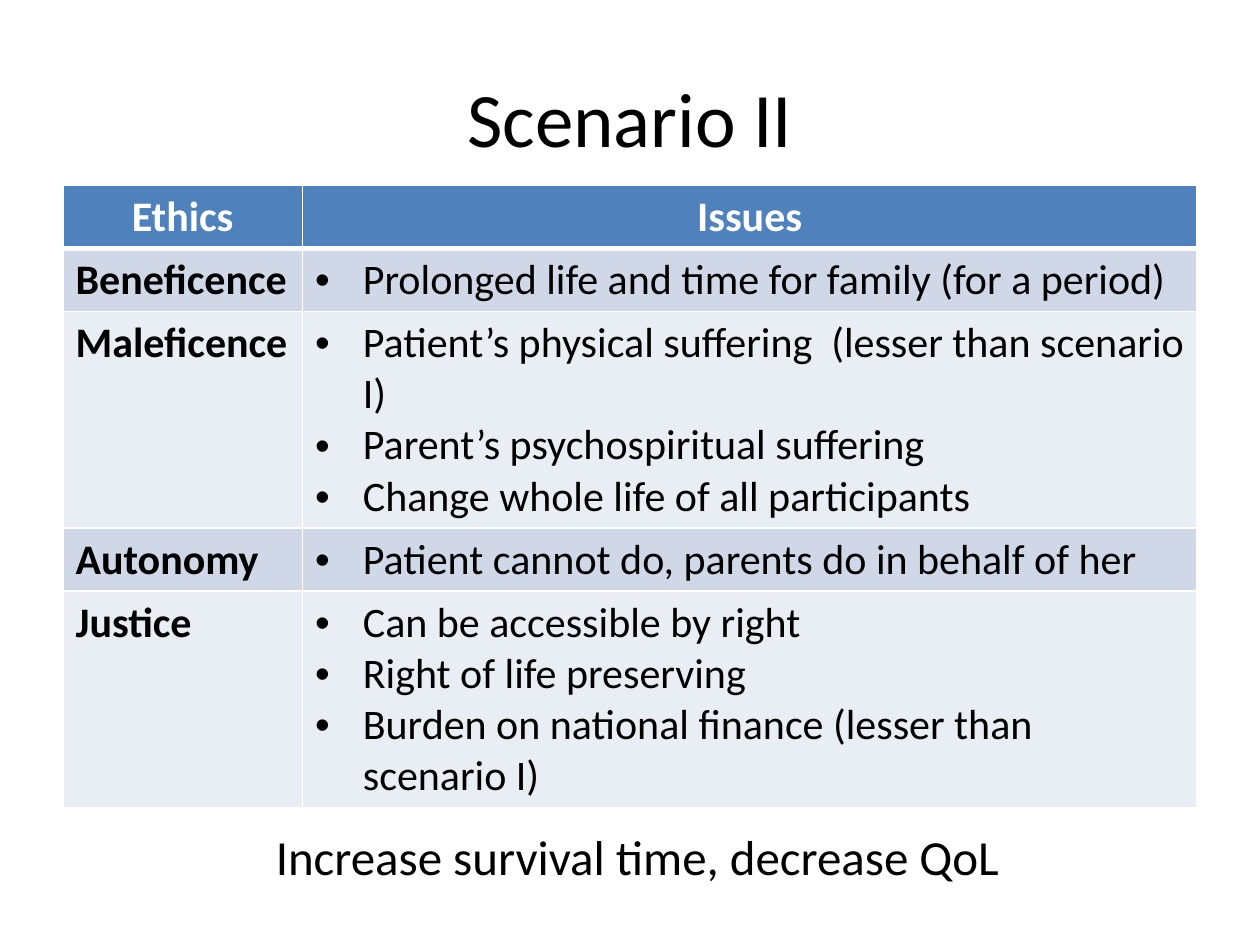
from lxml import etree
from pptx import Presentation
from pptx.dml.color import RGBColor
from pptx.enum import text as t
from pptx.oxml.ns import qn
from pptx.util import Inches, Pt

BLACK = RGBColor(0x00, 0x00, 0x00)
WHITE = RGBColor(0xFF, 0xFF, 0xFF)
HEADER_BLUE = RGBColor(0x4F, 0x81, 0xBD)
BANDS = (RGBColor(0xD0, 0xD8, 0xE8), RGBColor(0xE9, 0xED, 0xF4))

TITLE = "Scenario II"
HEADINGS = ("Ethics", "Issues")
ETHICS = [
    ("Beneficence", ["Prolonged life and time for family (for a period)"], 0.5),
    ("Maleficence", ["Patient’s physical suffering  (lesser than scenario I)",
                     "Parent’s psychospiritual suffering",
                     "Change whole life of all participants"], 1.72),
    ("Autonomy", ["Patient cannot do, parents do in behalf of her"], 0.5),
    ("Justice", ["Can be accessible by right",
                 "Right of life preserving",
                 "Burden on national finance (lesser than scenario I)"], 1.72),
]
CONCLUSION = "Increase survival time, decrease QoL"
COLUMN_WIDTHS = (1.9, 7.1)
HEADER_HEIGHT = 0.5
INDENT = Inches(0.38)


def write(frame, lines, size=24, color=BLACK, bold=False, align=t.PP_ALIGN.LEFT, bullet=False):
    for index, line in enumerate(lines):
        paragraph = frame.paragraphs[0] if index == 0 else frame.add_paragraph()
        paragraph.alignment = align
        run = paragraph.add_run()
        run.text = line
        run.font.name = "Calibri"
        run.font.size = Pt(size)
        run.font.bold = bold
        run.font.color.rgb = color
        if bullet:
            properties = paragraph._p.get_or_add_pPr()
            properties.set("marL", str(INDENT))
            properties.set("indent", str(-INDENT))
            etree.SubElement(properties, qn("a:buFont"), typeface="Arial")
            etree.SubElement(properties, qn("a:buChar"), char="•")


def add_text(slide, box, line, anchor=t.MSO_ANCHOR.TOP, **style):
    frame = slide.shapes.add_textbox(*map(Inches, box)).text_frame
    frame.word_wrap = True
    frame.vertical_anchor = anchor
    write(frame, [line], **style)
    return frame


def style_cell(cell, fill, top=1, bottom=1):
    properties = cell._tc.get_or_add_tcPr()
    for side, width in (("L", 1), ("R", 1), ("T", top), ("B", bottom)):
        border = etree.SubElement(properties, qn(f"a:ln{side}"), w=str(Pt(width)))
        solid = etree.SubElement(border, qn("a:solidFill"))
        etree.SubElement(solid, qn("a:srgbClr"), val=str(WHITE))
    cell.fill.solid()
    cell.fill.fore_color.rgb = fill


def add_ethics_table(slide):
    heights = [HEADER_HEIGHT] + [height for _, _, height in ETHICS]
    box = (0.5, 1.47, sum(COLUMN_WIDTHS), sum(heights))
    table = slide.shapes.add_table(len(heights), len(COLUMN_WIDTHS), *map(Inches, box)).table
    for column, width in zip(table.columns, COLUMN_WIDTHS):
        column.width = Inches(width)
    for row, height in zip(table.rows, heights):
        row.height = Inches(height)

    for column, heading in enumerate(HEADINGS):
        cell = table.cell(0, column)
        style_cell(cell, HEADER_BLUE, bottom=3)
        write(cell.text_frame, [heading], color=WHITE, bold=True, align=t.PP_ALIGN.CENTER)

    for row, (principle, issues, _) in enumerate(ETHICS, start=1):
        for column in range(len(COLUMN_WIDTHS)):
            style_cell(table.cell(row, column), BANDS[(row - 1) % 2], top=3 if row == 1 else 1)
        write(table.cell(row, 0).text_frame, [principle], bold=True)
        write(table.cell(row, 1).text_frame, issues, bullet=True)


def main():
    deck = Presentation()
    deck.slide_width, deck.slide_height = Inches(10), Inches(7.5)
    slide = deck.slides.add_slide(deck.slide_layouts[6])
    add_text(slide, (0.5, 0.3, 9, 1.25), TITLE, anchor=t.MSO_ANCHOR.MIDDLE,
             size=44, align=t.PP_ALIGN.CENTER)
    add_ethics_table(slide)
    conclusion = add_text(slide, (2.09, 6.51, 6.38, 0.57), CONCLUSION, size=28)
    conclusion.auto_size = t.MSO_AUTO_SIZE.SHAPE_TO_FIT_TEXT
    deck.save("out.pptx")


if __name__ == "__main__":
    main()
